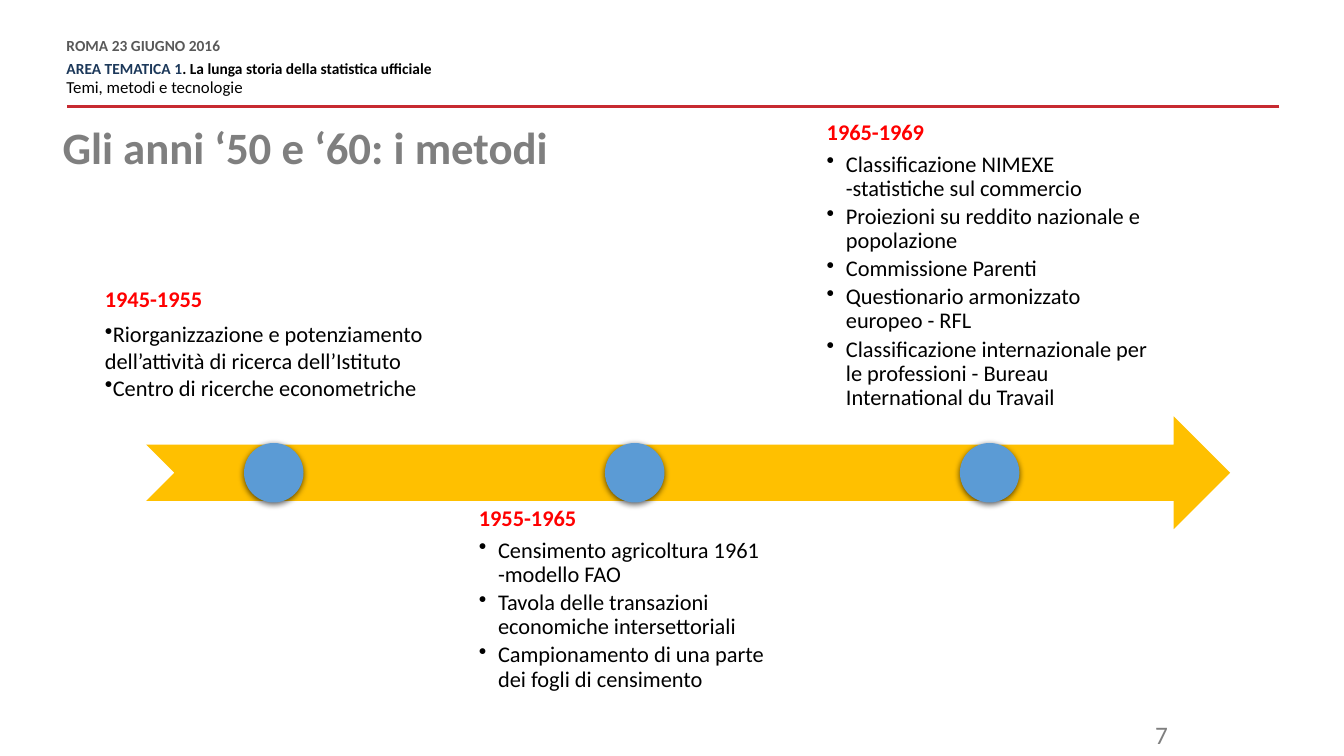
from lxml import etree
from pptx import Presentation
from pptx.dml.color import RGBColor
from pptx.enum.shapes import MSO_CONNECTOR as CONNECTOR, MSO_SHAPE as SHAPE
from pptx.enum.text import MSO_ANCHOR as ANCHOR, PP_ALIGN as ALIGN
from pptx.oxml.ns import qn
from pptx.util import Inches, Pt

# Content
WIDTH, HEIGHT = 13.33, 7.5
FONT = "Calibri"
RED, GREY, BLACK = "FF0000", "7F7F7F", "000000"
TITLE = "Gli anni ‘50 e ‘60: i metodi"
PAGE_NUMBER = "7"

# Header lines: (text, size, colour, bold) runs, space before, space after
HEADER = [
    ([("ROMA 23 GIUGNO 2016", 11, "595959", True)], 0, 6),
    ([("AREA TEMATICA 1", 11, "1C385A", True),
      (". La lunga storia della statistica ufficiale", 11, BLACK, True)], 0, 0),
    ([("Temi, metodi e tecnologie", 12, BLACK, False)], 3, 6),
]

# Periods: years, left, top, width, anchor, dot left, compact hanging bullets, items
PERIODS = [
    ("1945-1955", 0.92, 1.74, 3.58, ANCHOR.BOTTOM, 2.42, False, [
        "Riorganizzazione e potenziamento dell’attività di ricerca dell’Istituto",
        "Centro di ricerche econometriche"]),
    ("1955-1965", 4.63, 4.91, 3.33, ANCHOR.TOP, 6.0, True, [
        "Censimento agricoltura 1961 -modello FAO",
        "Tavola delle transazioni economiche intersettoriali",
        "Campionamento di una parte dei fogli di censimento"]),
    ("1965-1969", 8.08, 1.83, 3.47, ANCHOR.BOTTOM, 9.52, True, [
        "Classificazione NIMEXE -statistiche sul commercio",
        "Proiezioni su reddito nazionale e popolazione",
        "Commissione Parenti",
        "Questionario armonizzato europeo - RFL",
        "Classificazione internazionale per le professioni - Bureau International du Travail"]),
]
PERIOD_HEIGHT = 2.36
ARROW_LEFT, ARROW_TOP, ARROW_WIDTH, ARROW_HEIGHT = 1.45, 4.13, 10.75, 1.12
DOT = 0.59


def colour(value):
    return RGBColor.from_string(value)


def add_box(slide, left, top, width, height, inset=0.0, anchor=ANCHOR.TOP):
    box = slide.shapes.add_textbox(*map(Inches, (left, top, width, height)))
    frame = box.text_frame
    frame.word_wrap = True
    frame.vertical_anchor = anchor
    frame.margin_left = frame.margin_right = Inches(inset)
    frame.margin_top = frame.margin_bottom = Inches(inset)
    return frame


def add_para(frame, spans, spacing=None, before=0, after=0):
    first = frame.paragraphs[0]
    para = frame.add_paragraph() if first.runs else first
    for text, size, shade, bold in spans:
        span = para.add_run()
        span.text = text
        span.font.name, span.font.size, span.font.bold = FONT, Pt(size), bold
        span.font.color.rgb = colour(shade)
    para.line_spacing = spacing
    para.space_before, para.space_after = Pt(before), Pt(after)
    return para


def add_bullet(para, hang):
    props = para._p.get_or_add_pPr()
    props.set("marL", str(Inches(hang)))
    props.set("indent", str(-Inches(hang)))
    etree.SubElement(props, qn("a:buChar")).set("char", "•")


def add_shape(slide, kind, left, top, width, height, fill):
    shape = slide.shapes.add_shape(kind, *map(Inches, (left, top, width, height)))
    shape.shadow.inherit = False
    shape.fill.solid()
    shape.fill.fore_color.rgb = colour(fill)
    shape.line.fill.background()
    return shape


def add_shadow(shape):
    effects = shape._element.spPr.find(qn("a:effectLst"))
    shadow = etree.SubElement(effects, qn("a:outerShdw"), blurRad=str(Pt(4.5)),
                              dist=str(Pt(1.5)), dir="5400000", rotWithShape="0")
    shade = etree.SubElement(shadow, qn("a:srgbClr"), val=BLACK)
    etree.SubElement(shade, qn("a:alpha"), val="63000")


def add_header(slide):
    rule = slide.shapes.add_connector(
        CONNECTOR.STRAIGHT, *map(Inches, (12.69, 1.06, 0.66, 1.06)))
    rule.line.color.rgb = colour("C72A31")
    rule.line.width = Pt(2)
    etree.SubElement(rule._element.spPr, qn("a:effectLst"))
    frame = add_box(slide, 0.66, 0.39, 8.34, 0.59)
    for spans, before, after in HEADER:
        add_para(frame, spans, Pt(10.8), before, after)


def add_timeline(slide):
    add_shape(slide, SHAPE.NOTCHED_RIGHT_ARROW, ARROW_LEFT, ARROW_TOP,
              ARROW_WIDTH, ARROW_HEIGHT, "FFC000")
    dot_top = ARROW_TOP + (ARROW_HEIGHT - DOT) / 2
    for years, left, top, width, anchor, dot_left, compact, items in PERIODS:
        frame = add_box(slide, left, top, width, PERIOD_HEIGHT, 0.12, anchor)
        add_para(frame, [(years, 16, RED, True)], 0.9, after=5.6)
        for item in items:
            para = add_para(frame, [(item, 16, BLACK, False)],
                            0.9 if compact else None, after=2.8 if compact else 0)
            add_bullet(para, 0.19 if compact else 0)
        add_shadow(add_shape(slide, SHAPE.OVAL, dot_left, dot_top, DOT, DOT, "5B9BD5"))


def main():
    deck = Presentation()
    deck.slide_width, deck.slide_height = Inches(WIDTH), Inches(HEIGHT)
    slide = deck.slides.add_slide(deck.slide_layouts[6])
    add_header(slide)
    add_timeline(slide)

    # Title and page number
    title = add_box(slide, 0.62, 1.25, 12.11, 0.57)
    add_para(title, [(TITLE, 32, GREY, True)], 0.9)
    number = add_box(slide, 10.89, 7.09, 0.79, 0.35, 0.1)
    number.margin_top = number.margin_bottom = Inches(0.05)
    add_para(number, [(PAGE_NUMBER, 18, GREY, False)]).alignment = ALIGN.RIGHT

    deck.save("out.pptx")


if __name__ == "__main__":
    main()
